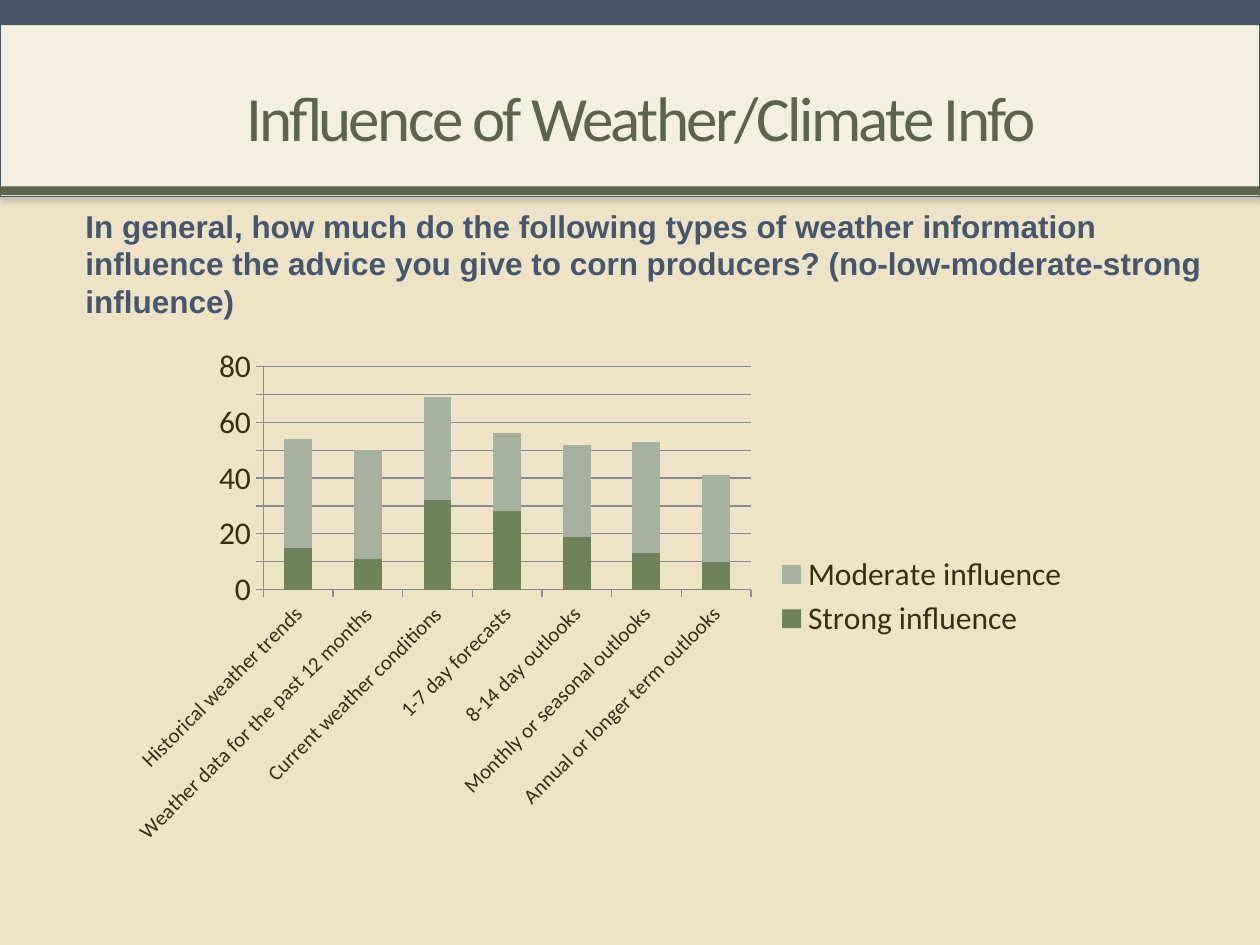
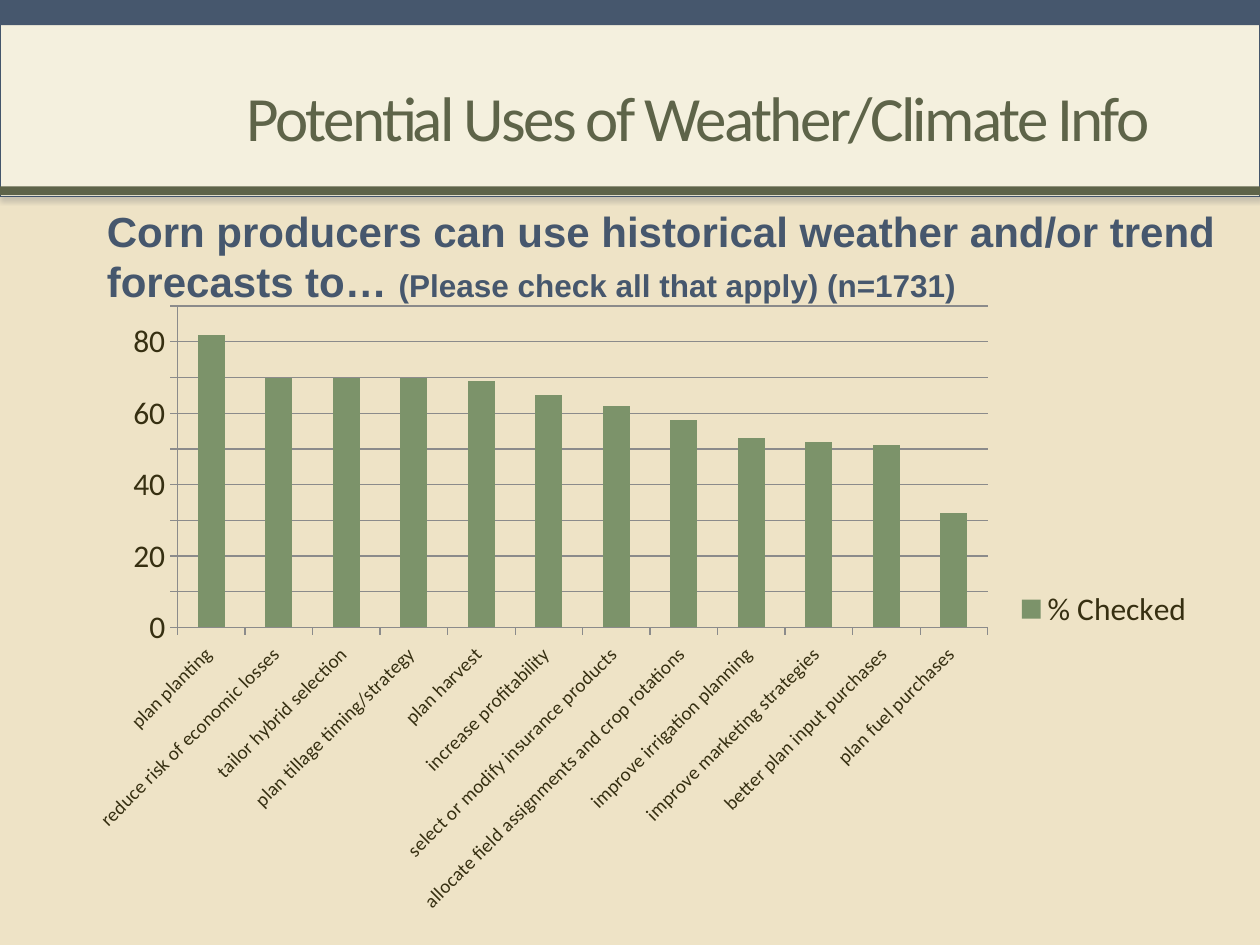
from lxml.etree import SubElement
from pptx import Presentation
from pptx.chart.data import CategoryChartData
from pptx.dml.color import RGBColor
from pptx.enum.chart import XL_CHART_TYPE as ChartType
from pptx.enum.chart import XL_LEGEND_POSITION as LegendPosition
from pptx.enum.chart import XL_TICK_MARK as TickMark
from pptx.enum.shapes import MSO_SHAPE as Preset
from pptx.enum.text import MSO_ANCHOR as Anchor
from pptx.oxml import parse_xml
from pptx.oxml.ns import nsdecls, qn
from pptx.util import Inches, Pt

SAND = RGBColor(0xEE, 0xE3, 0xC6)
CREAM = RGBColor(0xF4, 0xF0, 0xDE)
NAVY = RGBColor(0x46, 0x57, 0x6D)
EDGE = RGBColor(0x43, 0x55, 0x6B)
OLIVE = RGBColor(0x5E, 0x64, 0x49)
BROWN = RGBColor(0x36, 0x2F, 0x11)
GRID = RGBColor(0x8B, 0x8B, 0x8B)
STRONG = RGBColor(0x6E, 0x83, 0x5B)
MODERATE = RGBColor(0xA6, 0xB2, 0x9E)
CHECKED = RGBColor(0x7C, 0x93, 0x6A)

INFLUENCE = {
    "Historical weather trends": (15, 39),
    "Weather data for the past 12 months": (11, 39),
    "Current weather conditions": (32, 37),
    "1-7 day forecasts": (28, 28),
    "8-14 day outlooks": (19, 33),
    "Monthly or seasonal outlooks": (13, 40),
    "Annual or longer term outlooks": (10, 31),
}
USES = {
    "plan planting ": (82,),
    "reduce risk of economic losses ": (70,),
    "tailor hybrid selection ": (70,),
    "plan tillage timing/strategy ": (70,),
    "plan harvest ": (69,),
    "increase profitability ": (65,),
    "select or modify insurance products ": (62,),
    "allocate field assignments and crop rotations ": (58,),
    "improve irrigation planning ": (53,),
    "improve marketing strategies ": (52,),
    "better plan input purchases ": (51,),
    "plan fuel purchases ": (32,),
}


def inches(box):
    return [Inches(length) for length in box]


def add_band(slide, box, color):
    band = slide.shapes.add_shape(Preset.RECTANGLE, *inches(box))
    band.shadow.inherit = False
    band.fill.solid()
    band.fill.fore_color.rgb = color
    band.line.fill.background()
    return band


def add_words(slide, box, runs, name, color, bold=False):
    """Place one paragraph made of (text, size) runs in a text box."""
    frame = slide.shapes.add_textbox(*inches(box)).text_frame
    frame.word_wrap = True
    paragraph = frame.paragraphs[0]
    for words, size in runs:
        run = paragraph.add_run()
        run.text = words
        style = {"name": name, "size": Pt(size), "bold": bold}
        for key, value in style.items():
            setattr(run.font, key, value)
        run.font.color.rgb = color
    return frame


def add_header(slide, title):
    # Title panel with a soft shadow
    panel = add_band(slide, (0, 0.19, 10, 1.37), CREAM)
    panel.line.color.rgb = EDGE
    panel.line.width = Pt(0.75)
    effects = panel._element.spPr.find(qn("a:effectLst"))
    effects.append(parse_xml(
        f'<a:outerShdw {nsdecls("a")} blurRad="{Pt(3.1)}" dist="{Pt(1.8)}" '
        'dir="5400000" rotWithShape="0"><a:srgbClr val="808080">'
        '<a:alpha val="35000"/></a:srgbClr></a:outerShdw>'))

    # Bands above and below
    add_band(slide, (0, 0, 10, 0.2), NAVY)
    add_band(slide, (0, 1.48, 10, 0.07), OLIVE)

    # Title
    frame = add_words(slide, (1.86, 0.42, 7.84, 0.99), [(title, 36)],
                      "Calibri", OLIVE)
    frame.vertical_anchor = Anchor.MIDDLE
    paragraph = frame.paragraphs[0]
    paragraph.line_spacing = Pt(44)
    paragraph.runs[0].font._element.set("spc", "-150")


def add_question(slide, box, runs):
    add_words(slide, box, runs, "Arial", NAVY, bold=True)


def set_plot_area(chart, box, plot_box):
    """Fix the inner plot, given in inches from the chart's corner."""
    layout = parse_xml(
        f'<c:layout {nsdecls("c")}><c:manualLayout/></c:layout>')
    plot_area = chart._chartSpace.chart.plotArea
    for automatic in plot_area.findall(qn("c:layout")):
        plot_area.remove(automatic)
    plot_area.insert(0, layout)
    x, y, width, height = plot_box
    settings = {"layoutTarget": "inner", "xMode": "edge", "yMode": "edge",
                "x": x / box[2], "y": y / box[3],
                "w": width / box[2], "h": height / box[3]}
    for tag, value in settings.items():
        SubElement(layout[0], qn(f"c:{tag}")).set("val", str(value))


def add_columns(slide, box, plot_box, kind, rows, series_colors, top, label_size):
    data = CategoryChartData()
    data.categories = list(rows)
    for name, values in zip(series_colors, zip(*rows.values())):
        data.add_series(name, values)
    chart = slide.shapes.add_chart(kind, *inches(box), data).chart
    set_plot_area(chart, box, plot_box)
    chart.has_title = False
    chart.font.name = "Calibri"
    chart.font.size = Pt(18)
    chart.font.color.rgb = BROWN

    # Legend
    chart.has_legend = True
    chart.legend.position = LegendPosition.RIGHT
    chart.legend.include_in_layout = False

    # Columns
    plot = chart.plots[0]
    plot.gap_width = 150
    plot.vary_by_categories = False
    if kind == ChartType.COLUMN_STACKED:
        plot.overlap = 100
    for series, color in zip(plot.series, series_colors.values()):
        series.format.fill.solid()
        series.format.fill.fore_color.rgb = color

    # Axes
    types, scale = chart.category_axis, chart.value_axis
    scale.minimum_scale, scale.maximum_scale, scale.major_unit = 0, top, 10
    scale.has_major_gridlines = True
    for part in (types, scale, scale.major_gridlines):
        part.format.line.color.rgb = GRID
        part.format.line.width = Pt(0.75)
    for axis in (types, scale):
        axis.major_tick_mark = TickMark.OUTSIDE
    types.tick_labels.font.size = Pt(label_size)
    types._element.find(qn("c:txPr")).find(qn("a:bodyPr")).set("rot", "-2700000")


def new_slide(deck, title):
    slide = deck.slides.add_slide(deck.slide_layouts[6])
    slide.background.fill.solid()
    slide.background.fill.fore_color.rgb = SAND
    add_header(slide, title)
    return slide


def add_influence_slide(deck):
    slide = new_slide(deck, "Influence of Weather/Climate Info")
    add_question(slide, (0.58, 1.59, 9.17, 0.71), [
        ("In general, how much do the following types of weather information "
         "influence the advice you give to corn producers? "
         "(no-low-moderate-strong influence)", 18)])
    add_columns(slide, (0.92, 2.68, 7.67, 4.11), (1.17, 0.23, 3.87, 1.77),
                ChartType.COLUMN_STACKED, INFLUENCE,
                {"Strong influence": STRONG, "Moderate influence": MODERATE},
                top=80, label_size=12)


def add_uses_slide(deck):
    slide = new_slide(deck, "Potential Uses of Weather/Climate Info")
    add_columns(slide, (0.58, 2.33, 9, 5.01), (0.83, 0.1, 6.43, 2.55),
                ChartType.COLUMN_CLUSTERED, USES, {"% Checked": CHECKED},
                top=90, label_size=11)
    add_question(slide, (0.75, 1.58, 9, 0.91), [
        ("Corn producers can use historical weather and/or trend "
         "forecasts to… ", 24),
        ("(Please check all that apply) (n=1731)", 18)])


def main():
    deck = Presentation()
    deck.slide_width, deck.slide_height = Inches(10), Inches(7.5)
    add_influence_slide(deck)
    add_uses_slide(deck)
    deck.save("out.pptx")


if __name__ == "__main__":
    main()
